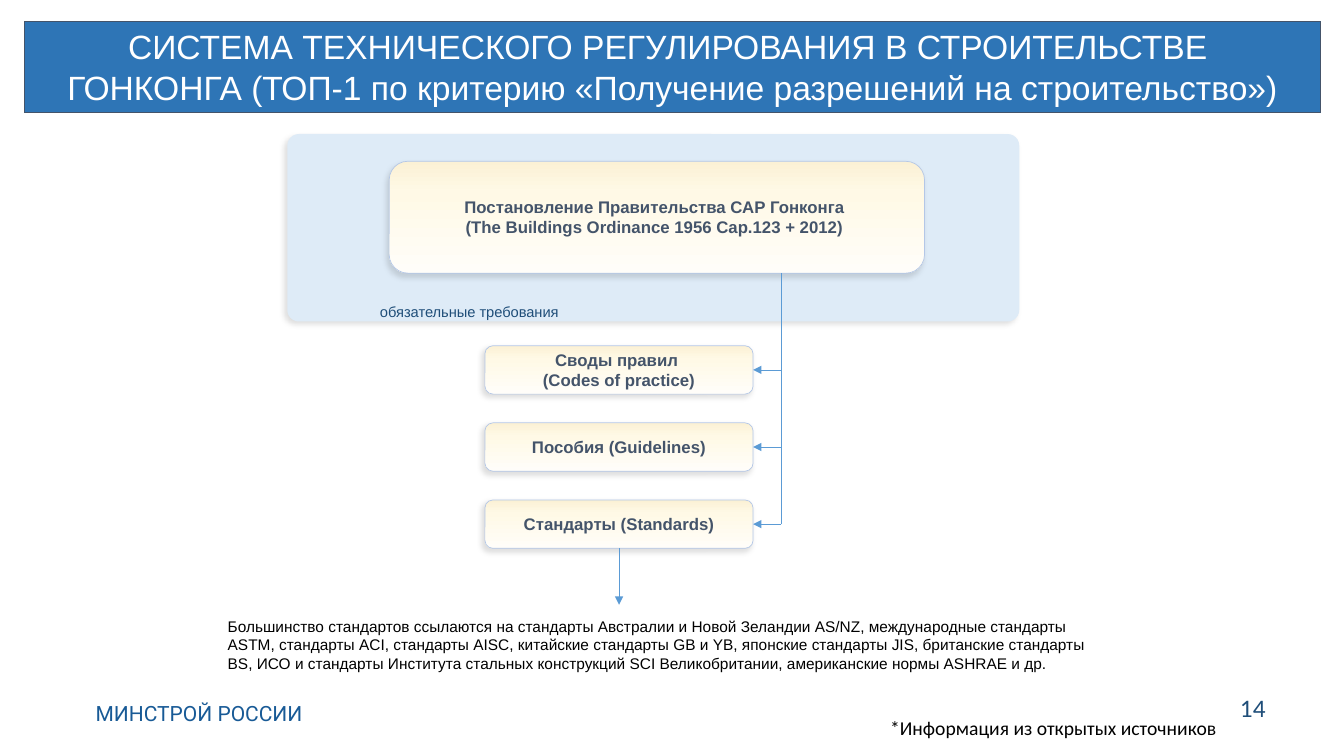
from lxml import etree
from pptx import Presentation
from pptx.dml.color import RGBColor
from pptx.enum.shapes import MSO_CONNECTOR as LINK, MSO_SHAPE as SHAPE
from pptx.enum.text import MSO_ANCHOR as ANCHOR, PP_ALIGN as ALIGN
from pptx.oxml.ns import qn
from pptx.util import Inches, Pt

# Content (\v is a line break inside a paragraph)
TITLE = ("СИСТЕМА ТЕХНИЧЕСКОГО РЕГУЛИРОВАНИЯ В СТРОИТЕЛЬСТВЕ \v"
         "ГОНКОНГА (ТОП-1 по критерию «Получение разрешений на строительство»)")
LAW = ("Постановление Правительства САР Гонконга \v"
       "(The Buildings Ordinance 1956 Cap.123 + 2012) ")
RULES = ["Своды правил \v(Codes of practice)",
         "Пособия (Guidelines)",
         "Стандарты (Standards)"]
MUST = "обязательные требования"
NOTE = ("Большинство стандартов ссылаются на стандарты Австралии и Новой "
        "Зеландии AS/NZ, международные стандарты ASTM, стандарты ACI, "
        "стандарты AISC, китайские стандарты GB и YB, японские стандарты JIS, "
        "британские стандарты BS, ИСО и стандарты Института стальных "
        "конструкций SCI Великобритании, американские нормы ASHRAE и др.")
OWNER = "МИНСТРОЙ РОССИИ"
PAGE = "14"
SOURCE = "*Информация из открытых источников"

WHITE = RGBColor(0xFF, 0xFF, 0xFF)
BLACK = RGBColor(0, 0, 0)
BLUE = RGBColor(0x2E, 0x75, 0xB6)
SLATE = RGBColor(0x44, 0x54, 0x6A)
PALE = RGBColor(0xDE, 0xEB, 0xF7)
EDGE = RGBColor(0xB4, 0xC7, 0xE7)
ARROW = RGBColor(0x5B, 0x9B, 0xD5)
NAVY = RGBColor(0x1F, 0x4E, 0x79)
BRAND = RGBColor(0x18, 0x5A, 0x96)
CREAM = [(0, RGBColor(0xFB, 0xF1, 0xD5)),
         (28, RGBColor(0xFF, 0xF9, 0xE6)),
         (100, RGBColor(0xFF, 0xFD, 0xF9))]

# Geometry in inches
LAW_BOX = (3.86, 1.6, 5.31, 1.11)
RULE_X, RULE_Y, RULE_W, RULE_H, STEP = 4.81, 3.43, 2.66, 0.48, 0.765
TRUNK = 7.75

deck = Presentation()
deck.slide_width, deck.slide_height = Inches(13.33), Inches(7.5)
slide = deck.slides.add_slide(deck.slide_layouts[5])
shapes = slide.shapes


def add(parent, tag, **attrs):
    return etree.SubElement(parent, qn(tag), attrs)


def write(shape, text, size, color, font="Arial", bold=False,
          align=ALIGN.LEFT, anchor=ANCHOR.TOP, side=0.1, wrap=True):
    frame = shape.text_frame
    frame.text = text
    frame.word_wrap = wrap
    frame.vertical_anchor = anchor
    frame.margin_left = frame.margin_right = Inches(side)
    frame.margin_top = frame.margin_bottom = Inches(0.05)
    para = frame.paragraphs[0]
    para.alignment = align
    for run in para.runs:
        face = run.font
        face.name, face.size, face.bold = font, Pt(size), bold
        face.color.rgb = color


def label(box, text, size, color, **style):
    write(shapes.add_textbox(*map(Inches, box)), text, size, color, **style)


def panel(box, curve):
    shape = shapes.add_shape(SHAPE.ROUNDED_RECTANGLE, *map(Inches, box))
    shape.adjustments[0] = curve
    shape.line.fill.background()
    shape.shadow.inherit = False
    glow = add(shape._element.spPr.find(qn("a:effectLst")), "a:outerShdw",
               blurRad=str(Pt(4)), dist=str(Pt(3)), dir=str(135 * 60000),
               algn="tr", rotWithShape="0")
    add(add(glow, "a:srgbClr", val="000000"), "a:alpha", val="13000")
    return shape


def card(box, text):
    shape = panel(box, 0.167)
    shape.fill.gradient()
    shape.fill.gradient_angle = 270
    stops = shape._element.spPr.find(".//" + qn("a:gsLst"))
    for stop in list(stops):
        stops.remove(stop)
    for pos, color in CREAM:
        add(add(stops, "a:gs", pos=str(pos * 1000)), "a:srgbClr", val=str(color))
    shape.line.color.rgb = EDGE
    shape.line.width = Pt(0.5)
    write(shape, text, 12, SLATE, bold=True, align=ALIGN.CENTER,
          anchor=ANCHOR.MIDDLE, side=0.2)


def link(x1, y1, x2, y2, head=True):
    line = shapes.add_connector(LINK.STRAIGHT, *map(Inches, (x1, y1, x2, y2)))
    line.line.color.rgb = ARROW
    line.line.width = Pt(0.5)
    if head:
        add(line.line._get_or_add_ln(), "a:tailEnd", type="triangle")
    add(line._element.spPr, "a:effectLst")


# Title band
title = shapes.title
title.left, title.top, title.width, title.height = map(
    Inches, (0.24, 0.21, 12.86, 0.91))
title.fill.solid()
title.fill.fore_color.rgb = BLUE
title.line.color.rgb = SLATE
title.line.width = Pt(0.75)
write(title, TITLE, 24, WHITE, align=ALIGN.CENTER)

# Mandatory part
zone = panel((2.85, 1.33, 7.26, 1.86), 0.062)
zone.fill.solid()
zone.fill.fore_color.rgb = PALE
card(LAW_BOX, LAW)
label((3.67, 2.95, 2.05, 0.28), MUST, 10.5, NAVY, wrap=False)

# Lower documents, each reached from the trunk line
for i, rule in enumerate(RULES):
    top = RULE_Y + i * STEP
    mid = top + RULE_H / 2
    card((RULE_X, top, RULE_W, RULE_H), rule)
    link(TRUNK, mid, RULE_X + RULE_W, mid)
link(TRUNK, LAW_BOX[1] + LAW_BOX[3], TRUNK, mid, head=False)

# Standards explained
center = RULE_X + RULE_W / 2
link(center, top + RULE_H, center, 6)
label((2.16, 6.07, 8.95, 0.66), NOTE, 11, BLACK)

# Footer
label((0.85, 6.9, 9.13, 0.35), OWNER, 15, BRAND, font="Roboto")
label((12.05, 6.82, 0.75, 0.4), PAGE, 18, NAVY, font="Calibri",
      align=ALIGN.CENTER)
label((8.73, 7.05, 4.66, 0.34), SOURCE, 14, BLACK, font="Calibri")

deck.save("out.pptx")
